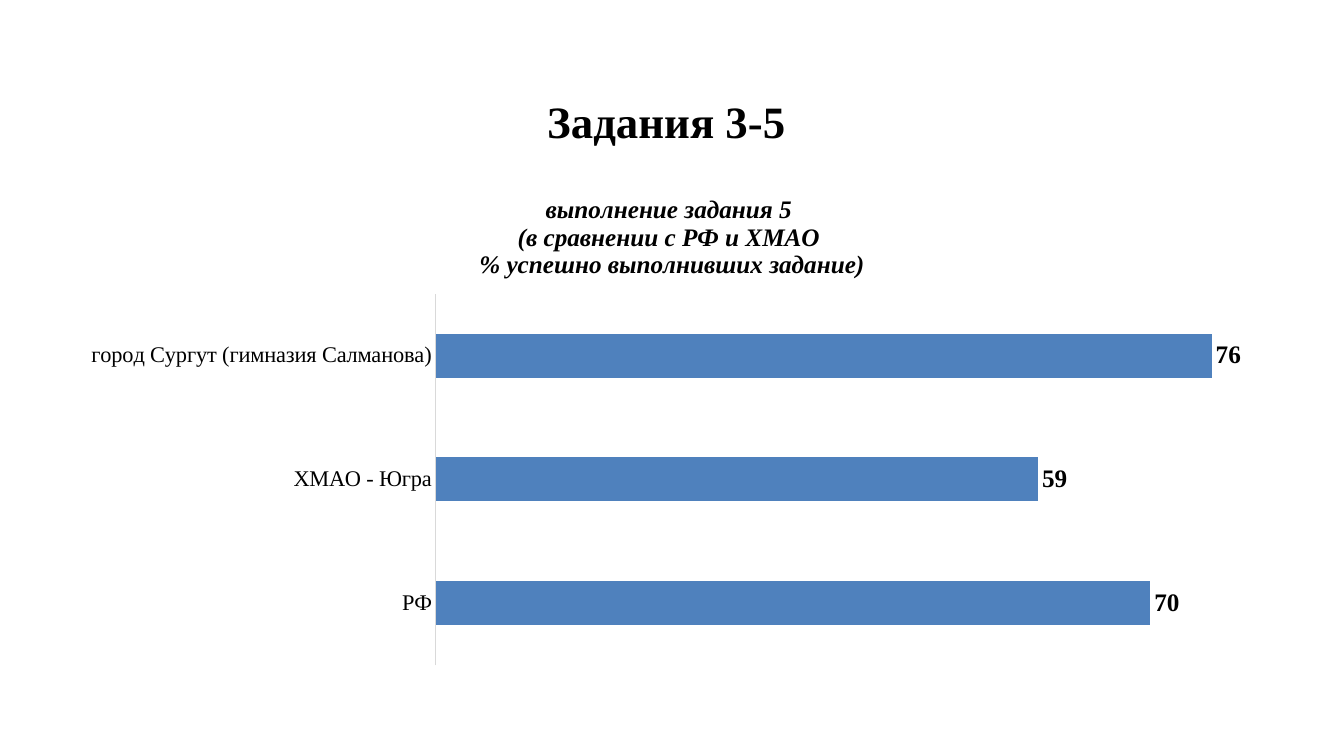
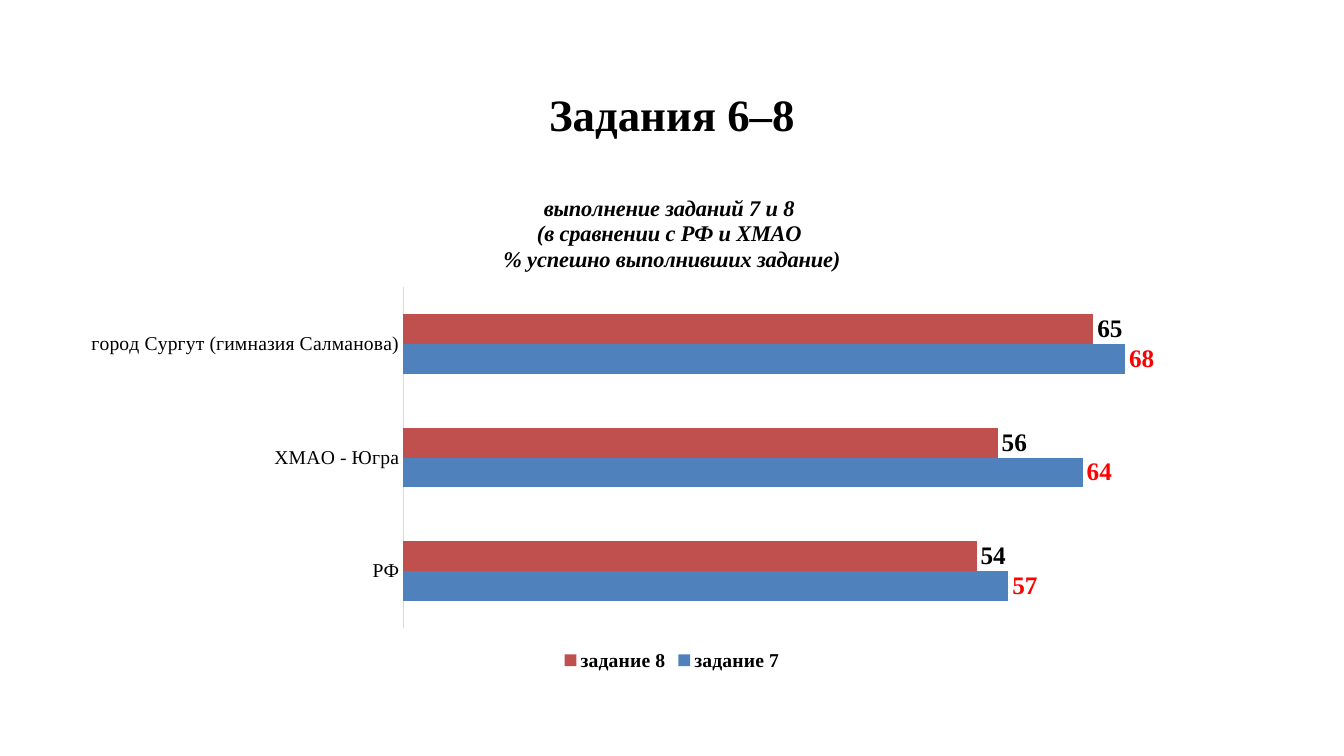
import dataclasses

import pptx
import pptx.chart.chart
import pptx.chart.data
import pptx.chart.series
import pptx.dml.color
import pptx.enum.chart
import pptx.enum.text
import pptx.slide
import pptx.util


@dataclasses.dataclass(frozen=True)
class Theme:
    font: str = "Times New Roman"
    paper: str = "FFFFFF"
    ink: str = "000000"
    blue: str = "4F81BD"
    red: str = "C0504D"
    alert: str = "FF0000"
    axis: str = "D9D9D9"
    heading_size: int = 32
    label_size: int = 18
    legend_size: int = 14
    axis_width: float = 0.75


@dataclasses.dataclass(frozen=True)
class Task:
    name: str
    percentages: tuple[int, ...]
    bar_color: str
    label_color: str


@dataclasses.dataclass(frozen=True)
class ResultsSlide:
    heading: str
    heading_top: float
    heading_height: float
    caption: tuple[str, ...]
    caption_size: int
    region_size: int
    tasks: tuple[Task, ...]


THEME = Theme()
SLIDE_WIDTH = pptx.util.Inches(13.33)
SLIDE_HEIGHT = pptx.util.Inches(7.5)
MARGIN = round(SLIDE_WIDTH * 0.05)
CONTENT_WIDTH = SLIDE_WIDTH - 2 * MARGIN
CHART_TOP = round(SLIDE_HEIGHT * 0.2333)
CHART_HEIGHT = round(SLIDE_HEIGHT * 0.66)
SCALE_MAXIMUM = 80
GAP_WIDTH = 182
REGIONS = ("РФ", "ХМАО - Югра", "город Сургут (гимназия Салманова)")
COMPARISON = ("(в сравнении с РФ и ХМАО ", "% успешно выполнивших задание)")

RESULTS = (
    ResultsSlide(
        "Задания 3-5 ", 0.11, 0.1,
        ("выполнение задания 5 ", *COMPARISON), 18, 16,
        (Task("задание 5", (70, 59, 76), THEME.blue, THEME.ink),),
    ),
    ResultsSlide(
        "Задания 6–8", 0.095, 0.11,
        ("выполнение заданий 7 и 8 ", *COMPARISON), 16, 14,
        (
            Task("задание 7", (57, 64, 68), THEME.blue, THEME.alert),
            Task("задание 8", (54, 56, 65), THEME.red, THEME.ink),
        ),
    ),
)


def rgb(code: str) -> pptx.dml.color.RGBColor:
    return pptx.dml.color.RGBColor.from_string(code)


def set_font(font, size: int, color: str = THEME.ink,
             bold: bool = False, italic: bool = False) -> None:
    font.name = THEME.font
    font.size = pptx.util.Pt(size)
    font.bold = bold
    font.italic = italic
    font.color.rgb = rgb(color)


def add_heading(slide: pptx.slide.Slide, results: ResultsSlide) -> None:
    heading = slide.shapes.add_textbox(
        MARGIN, round(SLIDE_HEIGHT * results.heading_top),
        CONTENT_WIDTH, round(SLIDE_HEIGHT * results.heading_height),
    ).text_frame
    heading.word_wrap = True
    heading.vertical_anchor = pptx.enum.text.MSO_ANCHOR.MIDDLE
    line = heading.paragraphs[0]
    line.alignment = pptx.enum.text.PP_ALIGN.CENTER
    run = line.add_run()
    run.text = results.heading
    set_font(run.font, THEME.heading_size, bold=True)


def add_caption(chart: pptx.chart.chart.Chart, results: ResultsSlide) -> None:
    chart.has_title = True
    chart.chart_title.include_in_layout = False
    caption = chart.chart_title.text_frame
    for index, text in enumerate(results.caption):
        line = caption.add_paragraph() if index else caption.paragraphs[0]
        line.alignment = pptx.enum.text.PP_ALIGN.CENTER
        run = line.add_run()
        run.text = text
        set_font(run.font, results.caption_size, bold=True, italic=True)


def style_axes(chart: pptx.chart.chart.Chart, region_size: int) -> None:
    regions = chart.category_axis
    regions.has_major_gridlines = False
    regions.major_tick_mark = pptx.enum.chart.XL_TICK_MARK.NONE
    regions.minor_tick_mark = pptx.enum.chart.XL_TICK_MARK.NONE
    regions.format.line.color.rgb = rgb(THEME.axis)
    regions.format.line.width = pptx.util.Pt(THEME.axis_width)
    set_font(regions.tick_labels.font, region_size)
    percentages = chart.value_axis
    percentages.minimum_scale = 0
    percentages.maximum_scale = SCALE_MAXIMUM
    percentages.has_major_gridlines = False
    percentages.visible = False


def style_bars(bars: pptx.chart.series.BarSeries, task: Task) -> None:
    bars.format.fill.solid()
    bars.format.fill.fore_color.rgb = rgb(task.bar_color)
    labels = bars.data_labels
    labels.show_value = True
    labels.position = pptx.enum.chart.XL_LABEL_POSITION.OUTSIDE_END
    set_font(labels.font, THEME.label_size, task.label_color, bold=True)


def add_legend(chart: pptx.chart.chart.Chart) -> None:
    chart.has_legend = True
    chart.legend.position = pptx.enum.chart.XL_LEGEND_POSITION.BOTTOM
    chart.legend.include_in_layout = False
    set_font(chart.legend.font, THEME.legend_size, bold=True)


def add_results_chart(slide: pptx.slide.Slide, results: ResultsSlide) -> None:
    scores = pptx.chart.data.CategoryChartData()
    scores.categories = REGIONS
    for task in results.tasks:
        scores.add_series(task.name, task.percentages)
    chart = slide.shapes.add_chart(
        pptx.enum.chart.XL_CHART_TYPE.BAR_CLUSTERED,
        MARGIN, CHART_TOP, CONTENT_WIDTH, CHART_HEIGHT, scores,
    ).chart
    set_font(chart.font, THEME.legend_size)
    add_caption(chart, results)
    style_axes(chart, results.region_size)
    plot = chart.plots[0]
    plot.vary_by_categories = False
    plot.gap_width = GAP_WIDTH
    plot.overlap = 0
    for bars, task in zip(plot.series, results.tasks):
        style_bars(bars, task)
    chart.has_legend = False
    if len(results.tasks) > 1:
        add_legend(chart)


def main() -> None:
    deck = pptx.Presentation()
    deck.slide_width = SLIDE_WIDTH
    deck.slide_height = SLIDE_HEIGHT
    blank = deck.slide_layouts[6]
    for results in RESULTS:
        slide = deck.slides.add_slide(blank)
        slide.background.fill.solid()
        slide.background.fill.fore_color.rgb = rgb(THEME.paper)
        add_heading(slide, results)
        add_results_chart(slide, results)
    deck.save("out.pptx")


if __name__ == "__main__":
    main()
